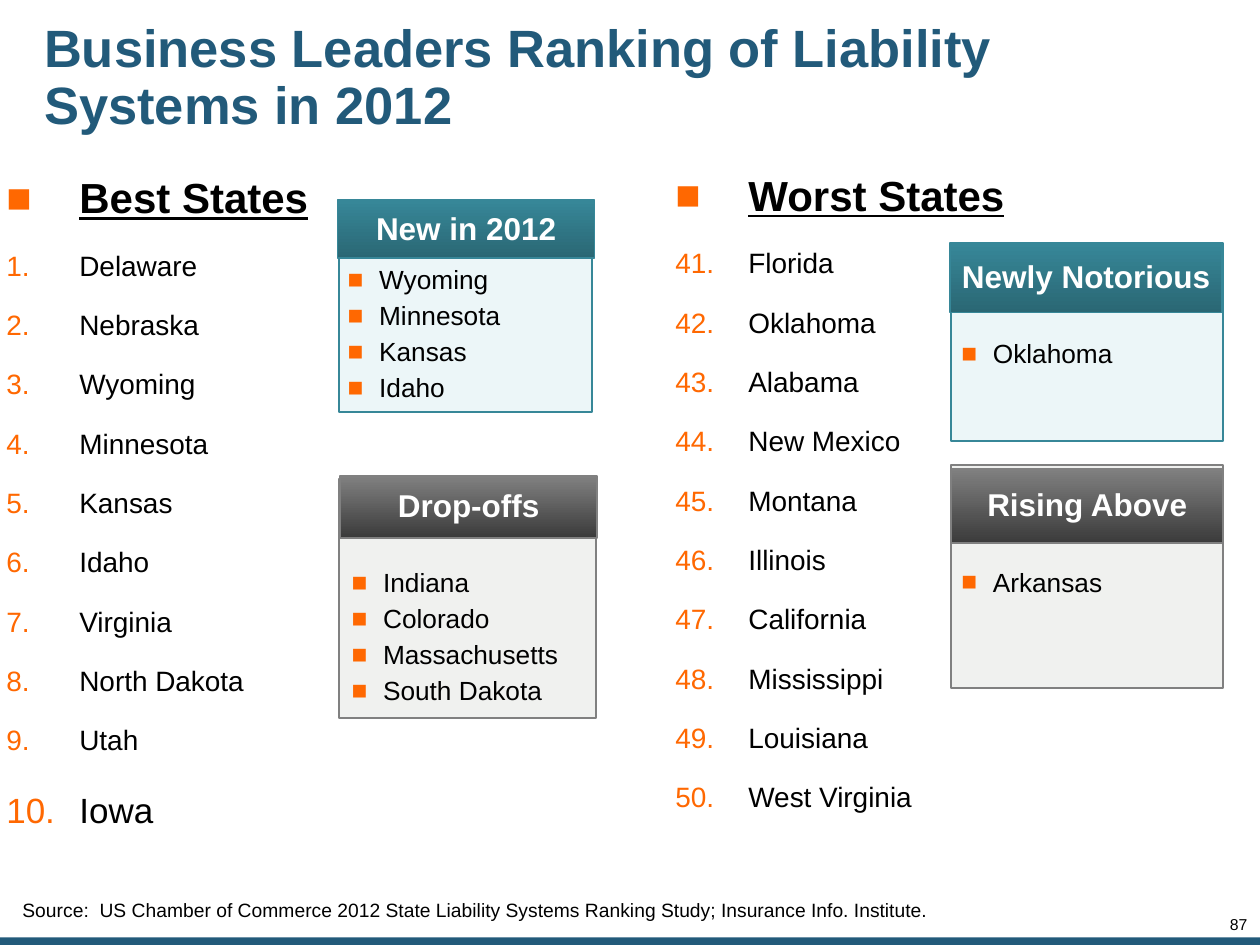
import dataclasses
import typing

import pptx
import pptx.dml.color
import pptx.enum.shapes
import pptx.enum.text
import pptx.util
from lxml import etree
from pptx.oxml import ns

Inches = pptx.util.Inches
Pt = pptx.util.Pt
Align = pptx.enum.text.PP_ALIGN
Anchor = pptx.enum.text.MSO_ANCHOR
Fit = pptx.enum.text.MSO_AUTO_SIZE
Box = typing.Tuple[float, float, float, float]

COLORS = {
    "navy": "225A7A", "orange": "FF6801", "black": "000000", "white": "FFFFFF",
    "teal": "378798", "teal_dark": "2A6774", "teal_pale": "ECF6F8",
    "gray": "808080", "gray_dark": "3B3B3B", "gray_pale": "F0F1EF",
}


@dataclasses.dataclass
class Ranking:
    box: Box
    title: str
    start: int
    states: typing.List[str]
    last: int = 16  # size of the final entry


@dataclasses.dataclass
class Card:
    tone: str
    title: str
    back: Box
    head: Box
    body: Box
    states: typing.List[str]
    lead: float = 0.9


def color(name: str) -> pptx.dml.color.RGBColor:
    return pptx.dml.color.RGBColor.from_string(COLORS[name])


def place(shape, box: Box) -> None:
    shape.left, shape.top, shape.width, shape.height = map(Inches, box)


def set_frame(frame, inset=(0.05, 0.05), anchor=Anchor.TOP, fit=Fit.NONE, wrap=True) -> None:
    frame.margin_left = frame.margin_right = Inches(inset[0])
    frame.margin_top = frame.margin_bottom = Inches(inset[1])
    frame.vertical_anchor = anchor
    frame.auto_size = fit
    frame.word_wrap = wrap


def add_mark(para, indent: float, start: typing.Optional[int]) -> None:
    """Give a paragraph an orange square, or a number when start is set."""
    props = para._p.get_or_add_pPr()
    props.set("marL", str(Inches(indent)))
    props.set("indent", str(-Inches(indent)))
    tint = etree.SubElement(props, ns.qn("a:buClr"))
    etree.SubElement(tint, ns.qn("a:srgbClr"), val=COLORS["orange"])
    etree.SubElement(props, ns.qn("a:buFont"), typeface="Arial")
    if start is None:
        etree.SubElement(props, ns.qn("a:buChar"), char="■")
    else:
        etree.SubElement(props, ns.qn("a:buAutoNum"), type="arabicPeriod", startAt=str(start))


def write(frame, text: str, size=16, tint="black", bold=False, line=False,
          align=Align.LEFT, lead=1.0, gap=0.0, indent=0.0, start=None) -> None:
    """Add one paragraph; the first in a frame gets no gap above."""
    first = not frame.text
    para = frame.paragraphs[0] if first else frame.add_paragraph()
    para.alignment = align
    para.line_spacing = lead
    para.space_before = Pt(0 if first else gap)
    if indent:
        add_mark(para, indent, start)
    run = para.add_run()
    run.text = text
    font = run.font
    font.name, font.size, font.bold, font.underline = "Arial", Pt(size), bold, line
    font.color.rgb = color(tint)


def add_rect(slide, box: Box, fill: str, edge=None, fade=None):
    shape = slide.shapes.add_shape(pptx.enum.shapes.MSO_SHAPE.RECTANGLE, *map(Inches, box))
    shape.shadow.inherit = False
    if fade:
        shape.fill.gradient()
        shape.fill.gradient_angle = 270
        for stop, name in zip(shape.fill.gradient_stops, (fill, fade)):
            stop.color.rgb = color(name)
    else:
        shape.fill.solid()
        shape.fill.fore_color.rgb = color(fill)
    if edge:
        shape.line.color.rgb = color(edge)
        shape.line.width = Pt(1)
    else:
        shape.line.fill.background()
    return shape


def add_text(slide, box: Box, **style):
    frame = slide.shapes.add_textbox(*map(Inches, box)).text_frame
    set_frame(frame, fit=Fit.SHAPE_TO_FIT_TEXT, **style)
    return frame


def fill_ranking(holder, rank: Ranking) -> None:
    place(holder, rank.box)
    frame = holder.text_frame
    set_frame(frame)
    write(frame, rank.title, size=24, bold=True, line=True, lead=0.9, indent=0.58)
    sizes = [16] * (len(rank.states) - 1) + [rank.last]
    for state, size in zip(rank.states, sizes):
        write(frame, state, size=size, lead=0.9, gap=size * 1.04, indent=0.58, start=rank.start)


def add_card(slide, card: Card) -> None:
    add_rect(slide, card.back, card.tone + "_pale", edge=card.tone)
    head = add_rect(slide, card.head, card.tone, edge=card.tone, fade=card.tone + "_dark")
    set_frame(head.text_frame, anchor=Anchor.MIDDLE)
    write(head.text_frame, card.title, size=18, tint="white", bold=True,
          align=Align.CENTER, lead=card.lead)
    body = add_text(slide, card.body)
    for state in card.states:
        write(body, state, size=15, lead=0.9, gap=4.4, indent=0.25)


RANKINGS = [
    Ranking((0, 1.36, 4.17, 5), "Best States", 1,
            ["Delaware", "Nebraska", "Wyoming", "Minnesota", "Kansas", "Idaho",
             "Virginia", "North Dakota", "Utah", "Iowa"], last=20),
    Ranking((5.31, 1.34, 4.17, 5), "Worst States", 41,
            ["Florida", "Oklahoma", "Alabama", "New Mexico", "Montana", "Illinois",
             "California", "Mississippi", "Louisiana", "West Virginia"]),
]
CARDS = [
    Card("teal", "New in 2012", (2.69, 1.59, 2.01, 1.68), (2.68, 1.59, 2.04, 0.46),
         (2.71, 2.07, 2, 1.2), ["Wyoming", "Minnesota", "Kansas", "Idaho"], 0.95),
    Card("gray", "Drop-offs", (2.69, 3.8, 2.04, 1.9), (2.7, 3.78, 2.04, 0.49),
         (2.74, 4.47, 1.98, 1.49), ["Indiana", "Colorado", "Massachusetts", "South Dakota"]),
    Card("teal", "Newly Notorious", (7.55, 1.93, 2.16, 1.57), (7.54, 1.93, 2.16, 0.55),
         (7.58, 2.66, 2.11, 0.33), ["Oklahoma"], 0.95),
    Card("gray", "Rising Above", (7.55, 3.69, 2.16, 1.77), (7.55, 3.72, 2.16, 0.59),
         (7.58, 4.47, 2.09, 0.33), ["Arkansas"]),
]


def main() -> None:
    deck = pptx.Presentation()
    deck.slide_width, deck.slide_height = Inches(10), Inches(7.5)
    slide = deck.slides.add_slide(deck.slide_layouts.get_by_name("Two Content"))

    # Title and the two ranked lists
    title, *holders = slide.placeholders
    place(title, (0.3, 0, 7.75, 1.25))
    set_frame(title.text_frame, anchor=Anchor.MIDDLE)
    write(title.text_frame, "Business Leaders Ranking of Liability Systems in 2012",
          size=30, tint="navy", bold=True, lead=0.9)
    for holder, rank in zip(holders, RANKINGS):
        fill_ranking(holder, rank)

    # Cards of changes
    for card in CARDS:
        add_card(slide, card)

    # Footer: bar, source and page number
    add_rect(slide, (0, 7.44, 10, 0.06), "navy")
    source = add_text(slide, (0.08, 7.08, 7.43, 0.29), inset=(0.1, 0.05), wrap=False)
    write(source, "Source:  US Chamber of Commerce 2012 State Liability Systems "
          "Ranking Study; Insurance Info. Institute.", size=11)
    page = add_text(slide, (9.41, 7.28, 0.49, 0.13), inset=(0, 0))
    write(page, "87", size=9, align=Align.RIGHT, lead=0.85)

    deck.save("out.pptx")


if __name__ == "__main__":
    main()
